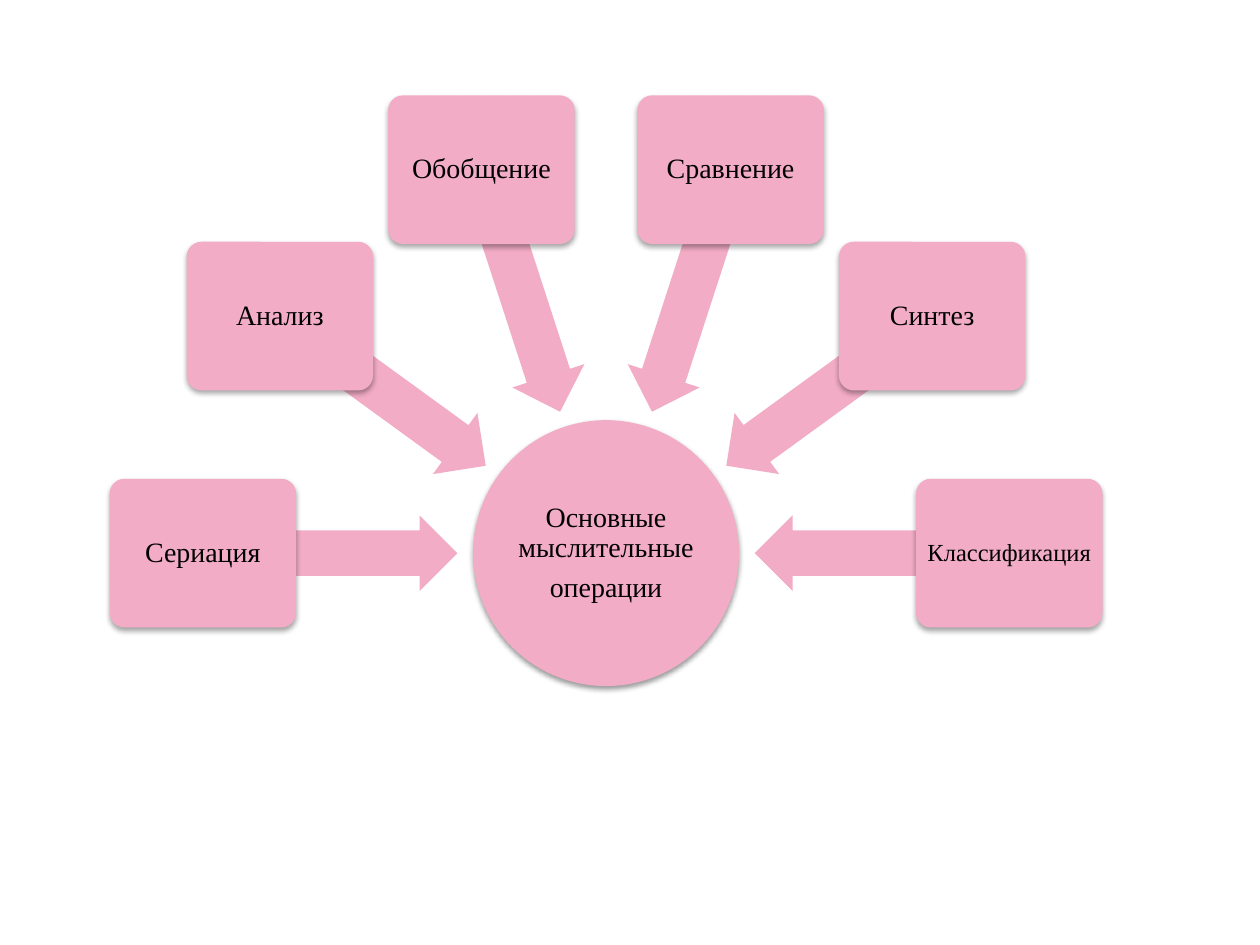
import math

import lxml.etree
import pptx
import pptx.dml.color
import pptx.enum.shapes
import pptx.enum.text
import pptx.oxml.ns
import pptx.util

Inches = pptx.util.Inches
SHAPES = pptx.enum.shapes.MSO_SHAPE
PINK = "F2ACC5"
BLACK = "000000"
CENTER_X, CENTER_Y = 4.81, 4.39
HUB_SIZE = 2.11
ARROW_RADIUS, ARROW_WIDTH, ARROW_HEIGHT = 2.19, 2.02, 0.6
CARD_RADIUS, CARD_WIDTH, CARD_HEIGHT = 3.2, 1.48, 1.18
FIRST_ANGLE, ANGLE_STEP = 180, 36
HUB_LINES = ["Основные мыслительные", "операции"]
OPERATIONS = [
    ("Сериация", 16),
    ("Анализ", 16),
    ("Обобщение", 16),
    ("Сравнение", 16),
    ("Синтез", 16),
    ("Классификация", 14),
]


def color(value):
    """Turn a hex string into a colour."""
    return pptx.dml.color.RGBColor.from_string(value)


def add_figure(slide, kind, angle, radius, width, height):
    """Add a flat pink shape centred at a polar position around the hub."""
    x = CENTER_X + radius * math.cos(math.radians(angle))
    y = CENTER_Y + radius * math.sin(math.radians(angle))
    figure = slide.shapes.add_shape(
        kind, Inches(x - width / 2), Inches(y - height / 2), Inches(width), Inches(height)
    )
    figure.fill.solid()
    figure.fill.fore_color.rgb = color(PINK)
    figure.line.fill.background()
    figure.shadow.inherit = False
    return figure


def add_shadow(figure, opacity, distance):
    """Give a figure a soft shadow that falls straight down."""
    qn = pptx.oxml.ns.qn
    effects = figure.fill._xPr.find(qn("a:effectLst"))
    shadow = lxml.etree.SubElement(
        effects, qn("a:outerShdw"), blurRad=str(pptx.util.Pt(3.1)),
        dist=str(pptx.util.Pt(distance)), dir="5400000", rotWithShape="0",
    )
    tint = lxml.etree.SubElement(shadow, qn("a:srgbClr"), val=BLACK)
    lxml.etree.SubElement(tint, qn("a:alpha"), val=str(opacity * 1000))


def write_label(figure, lines, size, inset):
    """Write centred paragraphs inside a figure."""
    frame = figure.text_frame
    frame.word_wrap = True
    frame.vertical_anchor = pptx.enum.text.MSO_ANCHOR.MIDDLE
    frame.margin_left = frame.margin_right = Inches(inset)
    frame.margin_top = frame.margin_bottom = Inches(inset)
    for index, line in enumerate(lines):
        paragraph = frame.add_paragraph() if index else frame.paragraphs[0]
        paragraph.alignment = pptx.enum.text.PP_ALIGN.CENTER
        paragraph.line_spacing = 0.9
        paragraph.space_after = pptx.util.Pt(size * 0.35)
        run = paragraph.add_run()
        run.text = line
        run.font.name = "Times New Roman"
        run.font.size = pptx.util.Pt(size)
        run.font.color.rgb = color(BLACK)


def add_hub(slide):
    """Add the central circle."""
    hub = add_figure(slide, SHAPES.OVAL, 0, 0, HUB_SIZE, HUB_SIZE)
    add_shadow(hub, 38, 1.6)
    write_label(hub, HUB_LINES, 16, 0.01)


def add_arrow(slide, angle):
    """Add a block arrow that points at the hub."""
    arrow = add_figure(slide, SHAPES.LEFT_ARROW, angle, ARROW_RADIUS, ARROW_WIDTH, ARROW_HEIGHT)
    arrow.adjustments[0] = 0.6
    arrow.adjustments[1] = 0.5
    arrow.rotation = angle % 360


def add_card(slide, angle, name, size):
    """Add the rounded card of one operation."""
    card = add_figure(slide, SHAPES.ROUNDED_RECTANGLE, angle, CARD_RADIUS, CARD_WIDTH, CARD_HEIGHT)
    card.adjustments[0] = 0.1
    add_shadow(card, 35, 1.8)
    write_label(card, [name], size, 0.03)


def main():
    """Build the slide and save it."""
    deck = pptx.Presentation()
    deck.slide_width, deck.slide_height = Inches(10), Inches(7.5)
    slide = deck.slides.add_slide(deck.slide_layouts[6])
    add_hub(slide)
    for index, (name, size) in enumerate(OPERATIONS):
        angle = FIRST_ANGLE + index * ANGLE_STEP
        add_arrow(slide, angle)
        add_card(slide, angle, name, size)
    deck.save("out.pptx")


if __name__ == "__main__":
    main()
